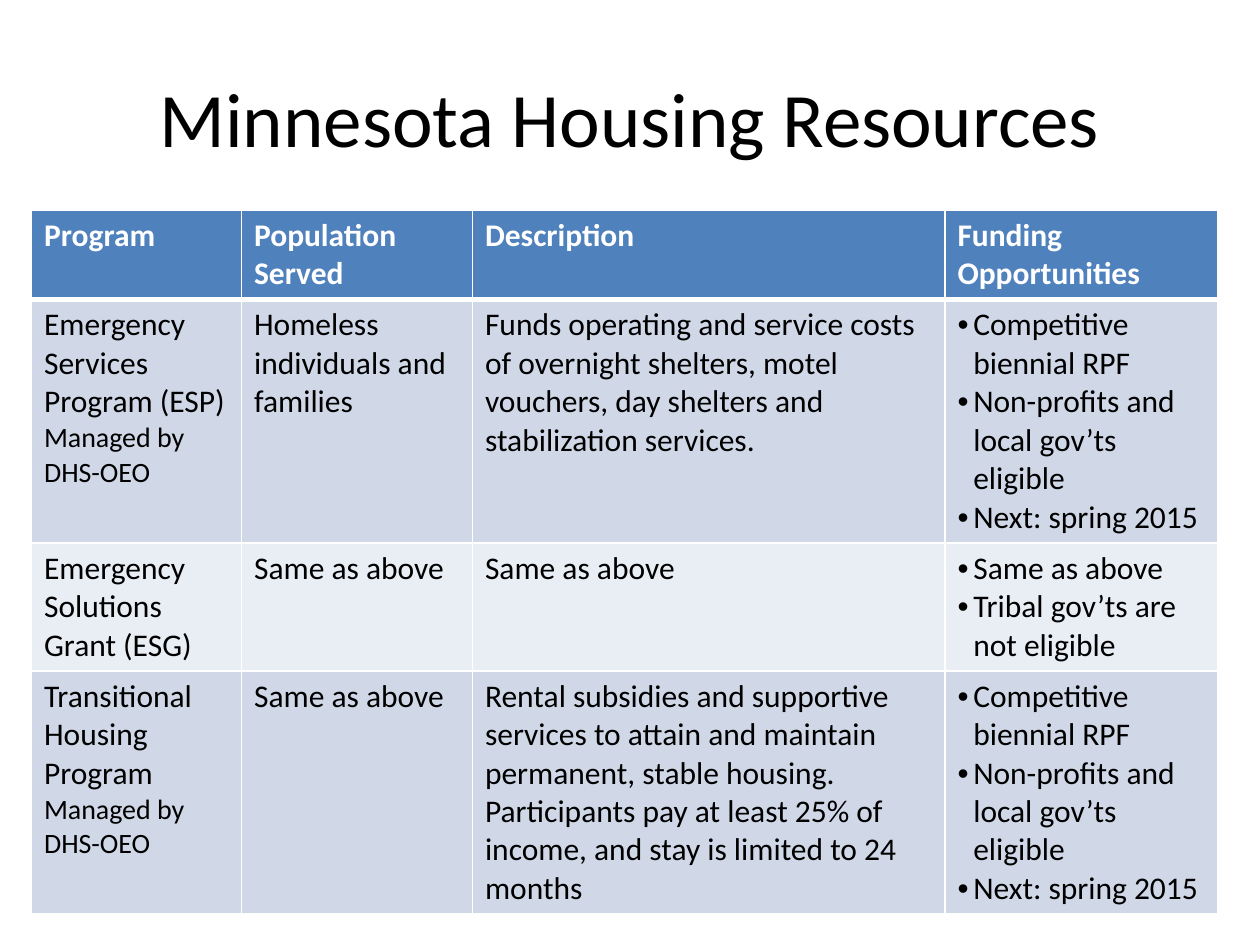
from lxml import etree
from pptx import Presentation
from pptx.dml.color import RGBColor
from pptx.enum import text
from pptx.oxml import ns
from pptx.util import Pt

FONT = "Calibri"
BLACK = RGBColor(0x00, 0x00, 0x00)
WHITE = RGBColor(0xFF, 0xFF, 0xFF)
HEADER_BLUE = RGBColor(0x4F, 0x81, 0xBD)
BANDS = (RGBColor(0xD0, 0xD8, 0xE8), RGBColor(0xE9, 0xED, 0xF4))

BODY_SIZE, NOTE_SIZE = 18, 16
COLUMN_WIDTHS = (120, 132, 270, 156)
ROW_HEIGHTS = (50, 139, 73, 138)
FUNDING_COLUMN = 3

# Each cell is a list of paragraphs; a tuple splits a paragraph into spans
MANAGER = "Managed by DHS-OEO"
SAME = "Same as above"
GRANTS = ["Competitive biennial RPF", "Non-profits and local gov’ts eligible",
          "Next: spring 2015"]
HEADINGS = [["Program"], ["Population Served"], ["Description"],
            ["Funding Opportunities"]]
PROGRAMS = [
    [[("Emergency Services Program (ESP) ", MANAGER)],
     ["Homeless individuals and families"],
     ["Funds operating and service costs of overnight shelters, motel "
      "vouchers, day shelters and stabilization services."],
     GRANTS],
    [["Emergency Solutions Grant (ESG)"], [SAME], [SAME],
     [SAME, "Tribal gov’ts are not eligible"]],
    [["Transitional Housing Program", MANAGER],
     [SAME],
     ["Rental subsidies and supportive services to attain and maintain "
      "permanent, stable housing. Participants pay at least 25% of income, "
      "and stay is limited to 24 months"],
     GRANTS],
]


def style_font(font, size, color, bold=False):
    font.name, font.size, font.bold = FONT, Pt(size), bold
    font.color.rgb = color


def add_title(page, wording):
    title = page.shapes.title
    title.left, title.top = Pt(36), Pt(21.6)
    title.width, title.height = Pt(648), Pt(90)
    frame = title.text_frame
    frame.text = wording
    frame.vertical_anchor = text.MSO_ANCHOR.MIDDLE
    para = frame.paragraphs[0]
    para.alignment = text.PP_ALIGN.CENTER
    style_font(para.runs[0].font, 44, BLACK)


def add_bullet(para):
    properties = para._p.get_or_add_pPr()
    properties.set("marL", str(Pt(9)))
    properties.set("indent", str(-Pt(9)))
    etree.SubElement(properties, ns.qn("a:buFont")).set("typeface", "Arial")
    etree.SubElement(properties, ns.qn("a:buChar")).set("char", "•")


def set_borders(cell, widths):
    properties = cell._tc.get_or_add_tcPr()
    for side, width in zip("LRTB", widths):
        line = etree.SubElement(properties, ns.qn(f"a:ln{side}"))
        line.set("w", str(Pt(width)))
        fill = etree.SubElement(line, ns.qn("a:solidFill"))
        etree.SubElement(fill, ns.qn("a:srgbClr")).set("val", str(WHITE))


def fill_cell(cell, paragraphs, fill, color, bold=False, bullets=False):
    cell.fill.solid()
    cell.fill.fore_color.rgb = fill
    frame = cell.text_frame
    for index, wording in enumerate(paragraphs):
        para = frame.add_paragraph() if index else frame.paragraphs[0]
        if bullets:
            add_bullet(para)
        for part in wording if isinstance(wording, tuple) else (wording,):
            span = para.add_run()
            span.text = part
            size = NOTE_SIZE if part == MANAGER else BODY_SIZE
            style_font(span.font, size, color, bold)


def add_program_table(page):
    rows = [HEADINGS] + PROGRAMS
    frame = page.shapes.add_table(
        len(rows), len(COLUMN_WIDTHS), Pt(18), Pt(120),
        Pt(sum(COLUMN_WIDTHS)), Pt(sum(ROW_HEIGHTS)))
    table = frame.table
    for column, width in zip(table.columns, COLUMN_WIDTHS):
        column.width = Pt(width)
    for row, height in zip(table.rows, ROW_HEIGHTS):
        row.height = Pt(height)

    for r, row in enumerate(rows):
        # The rule under the header is heavier than the other borders
        borders = (1, 1, 3 if r == 1 else 1, 3 if r == 0 else 1)
        for c, paragraphs in enumerate(row):
            cell = table.cell(r, c)
            set_borders(cell, borders)
            if r == 0:
                fill_cell(cell, paragraphs, HEADER_BLUE, WHITE, bold=True)
            else:
                fill_cell(cell, paragraphs, BANDS[(r - 1) % 2], BLACK,
                          bullets=c == FUNDING_COLUMN)


def main():
    deck = Presentation()
    deck.slide_width, deck.slide_height = Pt(720), Pt(540)
    page = deck.slides.add_slide(deck.slide_layouts[5])  # title only
    add_title(page, "Minnesota Housing Resources")
    add_program_table(page)
    deck.save("out.pptx")


if __name__ == "__main__":
    main()
